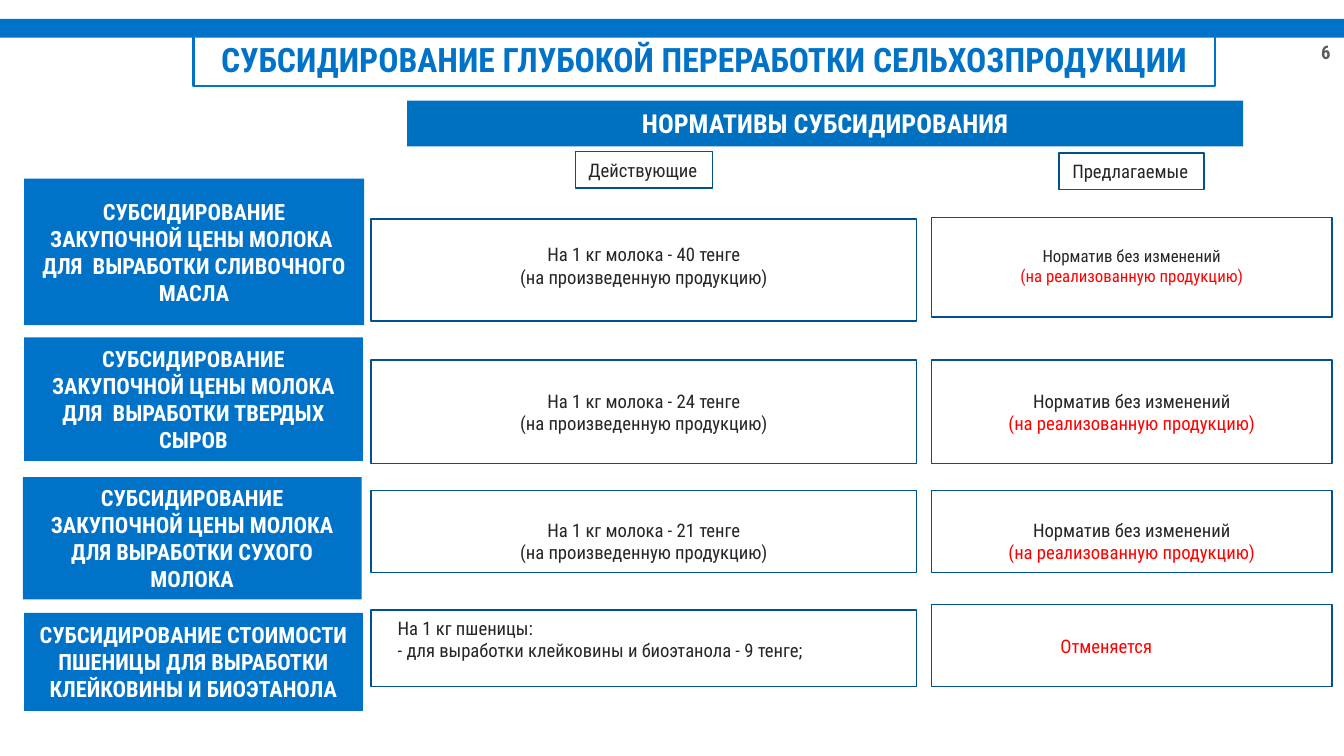
from pptx import Presentation
from pptx.dml.color import RGBColor
from pptx.enum.shapes import MSO_SHAPE
from pptx.enum.text import MSO_ANCHOR as ANCHOR, PP_ALIGN as ALIGN
from pptx.util import Inches, Pt

# Theme
THEME = {
    "font": "Roboto Condensed",
    "blue": "0073C8", "header": "0070C0", "border": "00518E",
    "dark": "262626", "red": "FF0000", "white": "FFFFFF", "grey": "5C5C5C",
    "title": 18, "heading": 14, "label": 12, "body": 10, "small": 9,
}

# Content
TITLE = "СУБСИДИРОВАНИЕ ГЛУБОКОЙ ПЕРЕРАБОТКИ СЕЛЬХОЗПРОДУКЦИИ"
HEADING = "НОРМАТИВЫ СУБСИДИРОВАНИЯ"
COLUMN_TAGS = [("Действующие", (4.28, 1.13, 1.02, 0.27)),
               ("Предлагаемые", (7.88, 1.14, 1.08, 0.27))]
MADE = "(на произведенную продукцию)"
UNCHANGED = [("Норматив без изменений", "dark"),
             ("(на реализованную продукцию)", "red")]


def milk(rate):
    return [(f"На 1 кг молока - {rate} тенге", "dark"), (MADE, "dark")]


# Each cell: (top, height), lines, text format
ROWS = [
    {"label": ("СУБСИДИРОВАНИЕ ЗАКУПОЧНОЙ ЦЕНЫ МОЛОКА  ДЛЯ  ВЫРАБОТКИ СЛИВОЧНОГО МАСЛА",
               (0.18, 1.33, 2.53, 1.09)),
     "current": ((1.63, 0.76), milk(40), {"inset_top": 0.18}),
     "proposed": ((1.62, 0.74), UNCHANGED, {"inset_top": 0.21, "size": "small"})},
    {"label": ("СУБСИДИРОВАНИЕ ЗАКУПОЧНОЙ ЦЕНЫ МОЛОКА ДЛЯ  ВЫРАБОТКИ ТВЕРДЫХ СЫРОВ",
               (0.18, 2.51, 2.52, 0.92)),
     "current": ((2.68, 0.77), milk(24), {"inset_top": 0.22}),
     "proposed": ((2.68, 0.77), UNCHANGED, {"inset_top": 0.22})},
    {"label": ("СУБСИДИРОВАНИЕ ЗАКУПОЧНОЙ ЦЕНЫ МОЛОКА ДЛЯ ВЫРАБОТКИ СУХОГО МОЛОКА",
               (0.17, 3.55, 2.52, 0.91)),
     "current": ((3.65, 0.61), milk(21), {"inset_top": 0.21}),
     "proposed": ((3.65, 0.61), UNCHANGED, {"inset_top": 0.21})},
    {"label": ("СУБСИДИРОВАНИЕ СТОИМОСТИ ПШЕНИЦЫ ДЛЯ ВЫРАБОТКИ КЛЕЙКОВИНЫ И БИОЭТАНОЛА",
               (0.18, 4.56, 2.52, 0.73)),
     "current": ((4.54, 0.57),
                 [("На 1 кг пшеницы:", "dark"),
                  ("- для выработки клейковины и биоэтанола - 9 тенге;", "dark")],
                 {"align": ALIGN.LEFT, "inset_left": 0.2}),
     "proposed": ((4.5, 0.61), [("Отменяется", "red")],
                  {"align": ALIGN.LEFT, "inset_left": 0.96,
                   "anchor": ANCHOR.MIDDLE})},
]
COLUMNS = {"current": (2.76, 4.06), "proposed": (6.93, 2.98)}  # left, width


def color(name):
    return RGBColor.from_string(THEME[name])


def write(sp, lines, size="body", bold=False, align=ALIGN.CENTER,
          anchor=ANCHOR.TOP, inset_left=0.1, inset_right=0.1,
          inset_top=0.05, wrap=True):
    """Fill a shape with (text, colour) lines, one paragraph each."""
    tf = sp.text_frame
    tf.word_wrap = wrap
    tf.vertical_anchor = anchor
    tf.margin_left, tf.margin_right = Inches(inset_left), Inches(inset_right)
    tf.margin_top, tf.margin_bottom = Inches(inset_top), Inches(0.05)
    for i, (text, ink) in enumerate(lines):
        p = tf.add_paragraph() if i else tf.paragraphs[0]
        p.alignment = align
        r = p.add_run()
        r.text = text
        r.font.name = THEME["font"]
        r.font.size = Pt(THEME[size])
        r.font.bold = bold
        r.font.color.rgb = color(ink)


def add_box(slide, box, fill=None, line=None):
    sp = slide.shapes.add_shape(MSO_SHAPE.RECTANGLE, *map(Inches, box))
    sp.shadow.inherit = False
    if fill:
        sp.fill.solid()
        sp.fill.fore_color.rgb = color(fill)
    else:
        sp.fill.background()
    if line:
        sp.line.color.rgb = color(line)
        sp.line.width = Pt(0.75)
    else:
        sp.line.fill.background()
    return sp


def main():
    prs = Presentation()
    prs.slide_width = Inches(10)
    prs.slide_height = prs.slide_width * 9 // 16
    slide = prs.slides.add_slide(prs.slide_layouts[5])

    # Top bar and page number
    add_box(slide, (0, 0.14, 10, 0.14), fill="blue")
    number = slide.shapes.add_textbox(*map(Inches, (9.69, 0.21, 0.35, 0.36)))
    write(number, [("6", "grey")], bold=True, anchor=ANCHOR.MIDDLE)

    # Title
    title = slide.shapes.title
    title.left, title.top, title.width, title.height = map(
        Inches, (1.44, 0.24, 7.6, 0.4))
    title.line.color.rgb = color("blue")
    title.line.width = Pt(1.5)
    write(title, [(TITLE, "blue")], size="title", bold=True)

    # Heading and column tags
    heading = add_box(slide, (3.03, 0.75, 6.22, 0.34), fill="header")
    write(heading, [(HEADING, "white")], size="heading", bold=True)
    for text, box in COLUMN_TAGS:
        write(add_box(slide, box, line="border"), [(text, "dark")],
              align=ALIGN.LEFT, wrap=False)

    # Rows: blue label, current rate, proposed rate
    for row in ROWS:
        text, box = row["label"]
        write(add_box(slide, box, fill="blue"), [(text, "white")],
              size="label", bold=True, anchor=ANCHOR.MIDDLE)
        for name, (left, width) in COLUMNS.items():
            (top, height), lines, style = row[name]
            cell = add_box(slide, (left, top, width, height), line="border")
            write(cell, lines, **style)

    prs.save("out.pptx")


if __name__ == "__main__":
    main()
